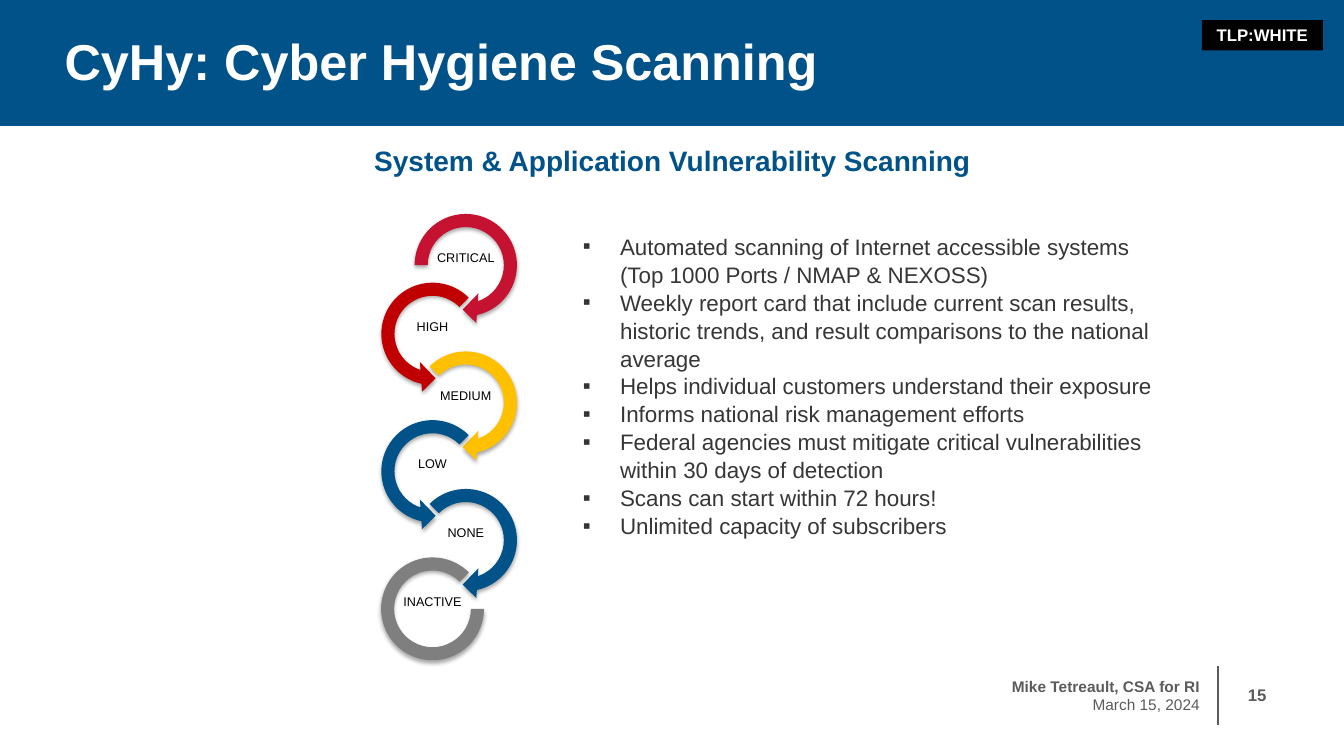
"""Builds the Cyber Hygiene Scanning slide."""
from lxml import etree
from pptx import Presentation
from pptx.dml.color import RGBColor
from pptx.enum.shapes import MSO_CONNECTOR, MSO_SHAPE
from pptx.enum.text import MSO_ANCHOR, MSO_AUTO_SIZE, PP_ALIGN
from pptx.oxml.ns import qn
from pptx.util import Inches, Pt

COLORS = {"blue": "005288", "white": "FFFFFF", "black": "000000", "gray": "5A5B5D",
          "body": "363636", "crimson": "C41230", "red": "C00000",
          "amber": "FFC000", "silver": "7F7F7F"}
TITLE = "CyHy: Cyber Hygiene Scanning"
SUBTITLE = "System & Application Vulnerability Scanning"
BULLETS = [
    "Automated scanning of Internet accessible systems (Top 1000 Ports / NMAP & NEXOSS)",
    "Weekly report card that include current scan results, historic trends, "
    "and result comparisons to the national average",
    "Helps individual customers understand their exposure",
    "Informs national risk management efforts",
    "Federal agencies must mitigate critical vulnerabilities within 30 days of detection",
    "Scans can start within 72 hours!",
    "Unlimited capacity of subscribers",
]
SEVERITIES = [("CRITICAL", "crimson"), ("HIGH", "red"), ("MEDIUM", "amber"),
              ("LOW", "blue"), ("NONE", "blue"), ("INACTIVE", "silver")]
PRESENTER, DATE, PAGE, MARKING = "Mike Tetreault, CSA for RI", "March 15, 2024", "15", "TLP:WHITE"


def rgb(name):
    return RGBColor.from_string(COLORS[name])


def place(sp, x, y, w, h):
    sp.left, sp.top, sp.width, sp.height = (Inches(v) for v in (x, y, w, h))


def fill_shape(sp, color):
    sp.fill.solid()
    sp.fill.fore_color.rgb = rgb(color)
    sp.line.fill.background()
    sp.shadow.inherit = False


def set_frame(sp, insets=(0.1, 0.05, 0.1, 0.05), anchor=MSO_ANCHOR.MIDDLE):
    tf = sp.text_frame
    tf.word_wrap, tf.auto_size, tf.vertical_anchor = True, MSO_AUTO_SIZE.NONE, anchor
    tf.margin_left, tf.margin_top, tf.margin_right, tf.margin_bottom = (
        Inches(v) for v in insets)
    return tf


def write(p, text, size, color, bold=False, align=PP_ALIGN.LEFT):
    p.alignment, p.space_before = align, Pt(0)
    r = p.add_run()
    r.text = text
    f = r.font
    f.name, f.size, f.bold, f.color.rgb = "Arial", Pt(size), bold, rgb(color)


def add_bullet(p, indent):
    pPr = p._p.get_or_add_pPr()
    pPr.set("marL", str(Inches(indent)))
    pPr.set("indent", str(-Inches(indent)))
    etree.SubElement(pPr, qn("a:buFont"), typeface="Arial")
    etree.SubElement(pPr, qn("a:buChar"), char="▪")


def add_shadow(sp):
    effects = sp._element.spPr.find(qn("a:effectLst"))
    shadow = etree.SubElement(effects, qn("a:outerShdw"), blurRad=str(Pt(3.1)),
                              dist=str(Pt(1.8)), dir="5400000", rotWithShape="0")
    color = etree.SubElement(shadow, qn("a:srgbClr"), val=COLORS["black"])
    etree.SubElement(color, qn("a:alpha"), val="35000")


def add_text(s, x, y, w, h, **frame):
    return set_frame(s.shapes.add_textbox(*(Inches(v) for v in (x, y, w, h))), **frame)


def add_severity_chain(s):
    pitch, last = 3.41 / (len(SEVERITIES) - 1), len(SEVERITIES) - 1
    for i, (label, color) in enumerate(SEVERITIES):
        x, y, size = (3.7 if i % 2 else 4.03), 2.04 + i * pitch, 1.18
        tf = add_text(s, x + 0.26, y + 0.43, 0.66, 0.33,
                      insets=(0.01,) * 4, anchor=MSO_ANCHOR.TOP)
        write(tf.paragraphs[0], label, 9, "black", align=PP_ALIGN.CENTER)
        if i == last:
            kind, adj = MSO_SHAPE.BLOCK_ARC, (0, 189, 0.127)
            x, y, size = x + 0.08, y + 0.08, 1.02
        elif i % 2:
            kind, adj = MSO_SHAPE.LEFT_CIRCULAR_ARROW, (0.11, 11.42, 63, 189, 0.125)
        else:
            kind, adj = MSO_SHAPE.CIRCULAR_ARROW, (0.11, 11.42, 45, 135 if i else 108, 0.125)
        sp = s.shapes.add_shape(kind, Inches(x), Inches(y), Inches(size), Inches(size))
        for n, value in enumerate(adj):
            sp.adjustments[n] = value
        fill_shape(sp, color)
        add_shadow(sp)


def main():
    prs = Presentation()
    prs.slide_width, prs.slide_height = Inches(13.33), Inches(7.5)
    s = prs.slides.add_slide(prs.slide_layouts.get_by_name("Two Content"))
    title, subtitle, body = s.placeholders

    place(title, 0, 0, 13.33, 1.25)
    title.fill.solid()
    title.fill.fore_color.rgb = rgb("blue")
    tf = set_frame(title, (0.64, 0.3, 0.5, 0.1), MSO_ANCHOR.TOP)
    write(tf.paragraphs[0], TITLE, 36, "white", True)

    place(subtitle, 1.67, 1.34, 10, 0.5)
    p = set_frame(subtitle, (0.5, 0.05, 0.5, 0.05)).paragraphs[0]
    pPr = p._p.get_or_add_pPr()
    pPr.set("marL", "0")
    pPr.set("indent", "0")
    etree.SubElement(pPr, qn("a:buNone"))
    write(p, SUBTITLE, 20, "blue", True, PP_ALIGN.CENTER)

    place(body, 5.58, 2.25, 6, 4.08)
    tf = set_frame(body, (0.2, 0.05, 0.1, 0.05), MSO_ANCHOR.TOP)
    for i, text in enumerate(BULLETS):
        p = tf.add_paragraph() if i else tf.paragraphs[0]
        add_bullet(p, 0.37)
        p.line_spacing = 1.04
        write(p, text, 16, "body")

    add_severity_chain(s)

    rule = s.shapes.add_connector(MSO_CONNECTOR.STRAIGHT, Inches(12.08), Inches(6.61),
                                  Inches(12.08), Inches(7.19))
    rule.line.color.rgb, rule.line.width = rgb("gray"), Pt(1)
    etree.SubElement(rule._element.spPr, qn("a:effectLst"))
    tf = add_text(s, 9, 6.61, 3, 0.58)
    write(tf.paragraphs[0], PRESENTER, 11, "gray", True, PP_ALIGN.RIGHT)
    write(tf.add_paragraph(), DATE, 11, "gray", align=PP_ALIGN.RIGHT)
    tf = add_text(s, 12.08, 6.74, 0.58, 0.3)
    write(tf.paragraphs[0], PAGE, 12, "gray", True, PP_ALIGN.RIGHT)

    marking = s.shapes.add_shape(MSO_SHAPE.RECTANGLE, Inches(11.92), Inches(0.2),
                                 Inches(1.2), Inches(0.3))
    fill_shape(marking, "black")
    write(set_frame(marking).paragraphs[0], MARKING, 12, "white", True, PP_ALIGN.CENTER)
    prs.save("out.pptx")


if __name__ == "__main__":
    main()
